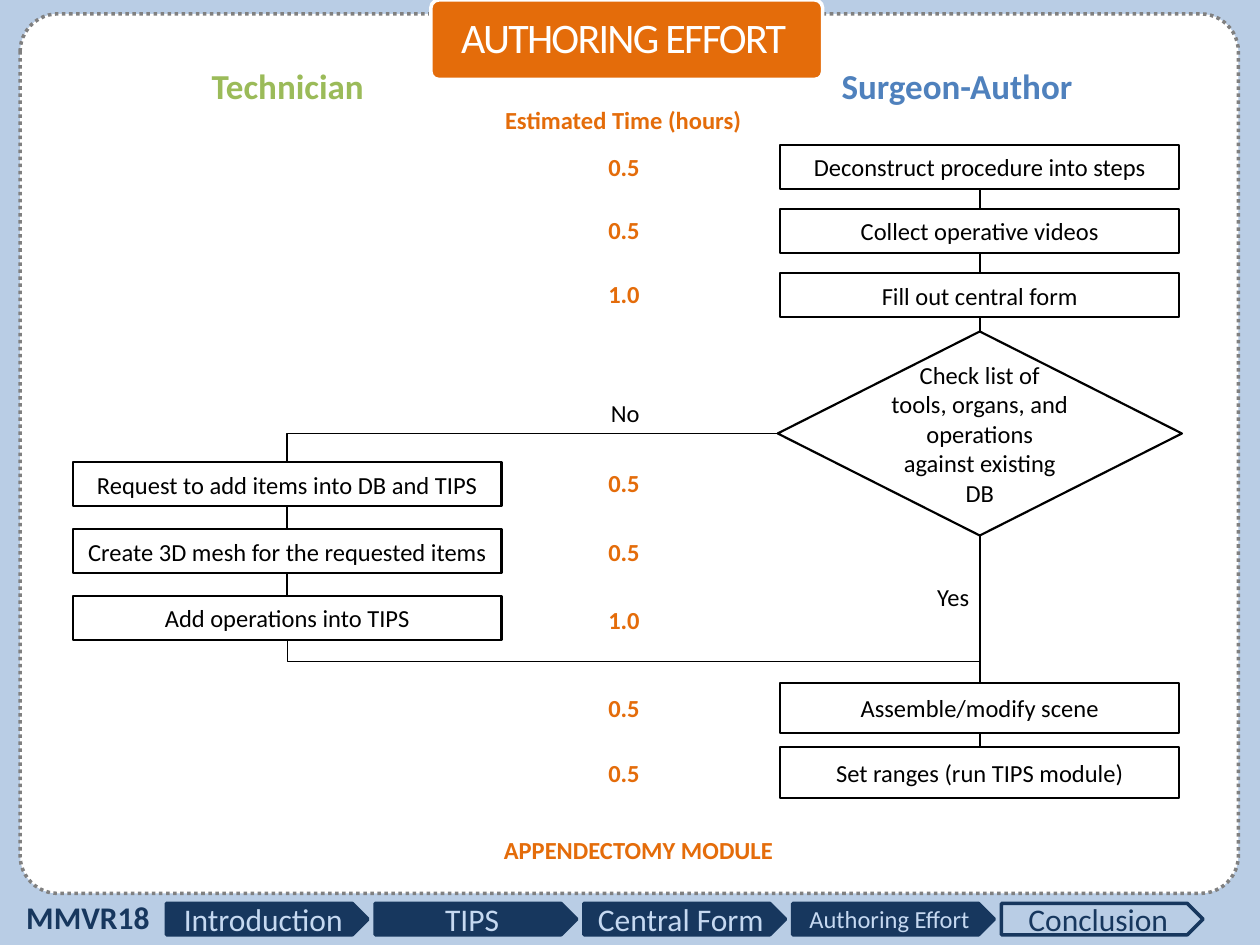
import pptx
import pptx.dml.color
import pptx.enum.dml
import pptx.enum.shapes
import pptx.enum.text
import pptx.oxml
import pptx.util

Pt = pptx.util.Pt
SHAPE = pptx.enum.shapes.MSO_SHAPE
CONNECTOR = pptx.enum.shapes.MSO_CONNECTOR
ALIGN = pptx.enum.text.PP_ALIGN
ANCHOR = pptx.enum.text.MSO_ANCHOR

FONT = "Calibri"
COLORS = {
    "background": "B9CDE5", "white": "FFFFFF", "black": "000000",
    "border": "808080", "navy": "17375E", "pale": "C6D9F1",
    "orange": "E46C0A", "blue": "4F81BD", "green": "9BBB59",
}
TOP, LEFT, BOTTOM = 0, 1, 2  # connection sites of rectangles and diamonds


def rgb(name):
    return pptx.dml.color.RGBColor.from_string(COLORS[name])


def write(sp, text, size, color, bold=False, align=ALIGN.CENTER):
    tf = sp.text_frame
    tf.text = text
    p = tf.paragraphs[0]
    p.alignment = align
    font = p.runs[0].font
    font.name, font.size, font.bold = FONT, Pt(size), bold
    font.color.rgb = rgb(color)
    return p


def add_shape(shapes, kind, box, fill, line, width):
    sp = shapes.add_shape(kind, *map(Pt, box))
    sp.shadow.inherit = False
    if fill:
        sp.fill.solid()
        sp.fill.fore_color.rgb = rgb(fill)
    else:
        sp.fill.background()
    sp.line.color.rgb = rgb(line)
    sp.line.width = Pt(width)
    sp.text_frame.vertical_anchor = ANCHOR.MIDDLE
    return sp


def add_label(shapes, box, text, size, color, bold=True):
    sp = shapes.add_textbox(*map(Pt, box))
    write(sp, text, size, color, bold, ALIGN.LEFT)
    sp.text_frame.word_wrap = False
    sp.text_frame.auto_size = pptx.enum.text.MSO_AUTO_SIZE.SHAPE_TO_FIT_TEXT


def add_node(shapes, box, text, kind=SHAPE.RECTANGLE):
    sp = add_shape(shapes, kind, box, "white", "black", 1.25)
    sp.text_frame.word_wrap = True
    write(sp, text, 14, "black")
    return sp


def connect(shapes, start, end, kind=CONNECTOR.STRAIGHT, site=BOTTOM):
    c = shapes.add_connector(kind, 0, 0, 0, 0)
    c.begin_connect(start, site)
    c.end_connect(end, TOP)
    c.line.color.rgb = rgb("black")
    c.line.width = Pt(1)
    c._element.spPr.append(pptx.oxml.parse_xml(
        '<a:effectLst xmlns:a="http://schemas.openxmlformats.org/drawingml/2006/main"/>'))
    return c


def connect_corner(shapes, start, end):
    """Run sideways from the left of start, then down into end."""
    c = connect(shapes, start, end, CONNECTOR.ELBOW, LEFT)
    c._element.spPr.prstGeom.set("prst", "bentConnector2")


def connect_step(shapes, start, end):
    """Run down, across and down again, by turning the elbow a quarter."""
    c = connect(shapes, start, end, CONNECTOR.ELBOW)
    shift = (c.width - c.height) // 2
    c.left, c.top = c.left + shift, c.top - shift
    c.width, c.height = c.height, c.width
    xfrm = c._element.spPr.xfrm
    xfrm.set("rot", "16200000")
    xfrm.set("flipH", "1")


def add_steps(shapes, box, pitch, texts):
    """Stack boxes of the given first box's size and chain them downwards."""
    x, y, w, h = box
    nodes = [add_node(shapes, (x, y + i * pitch, w, h), text)
             for i, text in enumerate(texts)]
    for upper, lower in zip(nodes, nodes[1:]):
        connect(shapes, upper, lower)
    return nodes


def add_panel(shapes, box):
    sp = add_shape(shapes, SHAPE.ROUNDED_RECTANGLE, box, "white", "border", 2)
    sp.adjustments[0] = 0.043
    sp.line.dash_style = pptx.enum.dml.MSO_LINE.ROUND_DOT


def add_navigation(shapes, box):
    x, y, w, h = box
    add_label(shapes, (x, y - 6.4, 85.7, 28.8), "MMVR18", 18, "navy")
    first, pitch = x + 87.2, 119.3
    tabs = [("Introduction", 18), ("TIPS", 18), ("Central Form", 18),
            ("Authoring Effort", 14), ("Conclusion", 18)]
    for i, (text, size) in enumerate(tabs):
        ahead = text == "Conclusion"
        sp = add_shape(shapes, SHAPE.PENTAGON, (first + i * pitch, y, 115.2, h),
                       None if ahead else "navy", "navy", 2)
        sp.text_frame.word_wrap = True
        write(sp, text, size, "navy" if ahead else "pale")


def add_title(shapes, box):
    x, y, w, h = box
    group = shapes.add_group_shape().shapes
    plate = add_shape(group, SHAPE.ROUNDED_RECTANGLE, box, "orange", "white", 2)
    plate.adjustments[0] = 0.1
    sp = group.add_textbox(*map(Pt, (x - 1.4, y + 1.4, w - 0.7, h - 2.2)))
    tf = sp.text_frame
    p = write(sp, "AUTHORING EFFORT", 24, "white")
    p.line_spacing = 0.9
    p.runs[0].font._element.set("spc", "-100")
    tf.word_wrap = True
    tf.vertical_anchor = ANCHOR.MIDDLE
    tf.margin_left = tf.margin_right = tf.margin_top = tf.margin_bottom = Pt(13)


def add_hours(shapes, box):
    x, y, w, h = box
    add_label(shapes, (x, y, w, 24.2), "Estimated Time (hours)", 14, "orange")
    rows = [(27.3, "0.5"), (63.3, "0.5"), (100, "1.0"), (208, "0.5"),
            (247, "0.5"), (286, "1.0"), (336.2, "0.5"), (373.7, "0.5")]
    for top, hours in rows:
        add_label(shapes, (x + 59, y + top, 32.4, 24.2), hours, 14, "orange")
    add_label(shapes, (x - 0.7, y + h - 24.2, 174.2, 24.2),
              "APPENDECTOMY MODULE", 14, "orange")


def add_flowchart(shapes, box):
    x, y, w, h = box
    right = x + 404
    add_label(shapes, (right + 28, y, 148.3, 31.5), "Surgeon-Author", 20, "blue")
    add_label(shapes, (x + 72, y, 102.2, 31.5), "Technician", 20, "green")

    technician = add_steps(shapes, (x, y + 231.1, 244.8, 25.2), 38.2, [
        "Request to add items into DB and TIPS",
        "Create 3D mesh for the requested items",
        "Add operations into TIPS"])
    prepare = add_steps(shapes, (right, y + 49.7, 228.2, 25.2), 36.7, [
        "Deconstruct procedure into steps",
        "Collect operative videos",
        "Fill out central form"])
    finish = add_steps(shapes, (right, y + 357.1, 228.2, 28.8), 36.9, [
        "Assemble/modify scene",
        "Set ranges (run TIPS module)"])
    check = add_node(shapes, (right - 1.4, y + 156.3, 231, 116.6),
                     "Check list of tools, organs, and operations against existing DB",
                     SHAPE.DIAMOND)

    connect(shapes, prepare[-1], check)
    connect(shapes, check, finish[0])
    connect_corner(shapes, check, technician[0])
    connect_step(shapes, technician[-1], finish[0])
    add_label(shapes, (x + 300.2, y + 190.8, 31, 24.2), "No", 14, "black", False)
    add_label(shapes, (x + 486.7, y + 295.9, 33.1, 24.2), "Yes", 14, "black", False)


def main():
    prs = pptx.Presentation()
    prs.slide_width, prs.slide_height = Pt(720), Pt(540)
    slide = prs.slides.add_slide(prs.slide_layouts[6])
    slide.background.fill.solid()
    slide.background.fill.fore_color.rgb = rgb("background")
    shapes = slide.shapes
    add_panel(shapes, (11.5, 7.9, 696.2, 502.6))
    add_navigation(shapes, (7.9, 516.2, 680, 18))
    add_flowchart(shapes, (41.8, 33.1, 634, 423))
    add_hours(shapes, (281.5, 56.2, 150.5, 441.8))
    add_title(shapes, (246.2, 0, 223.9, 45.4))
    prs.save("out.pptx")


if __name__ == "__main__":
    main()
